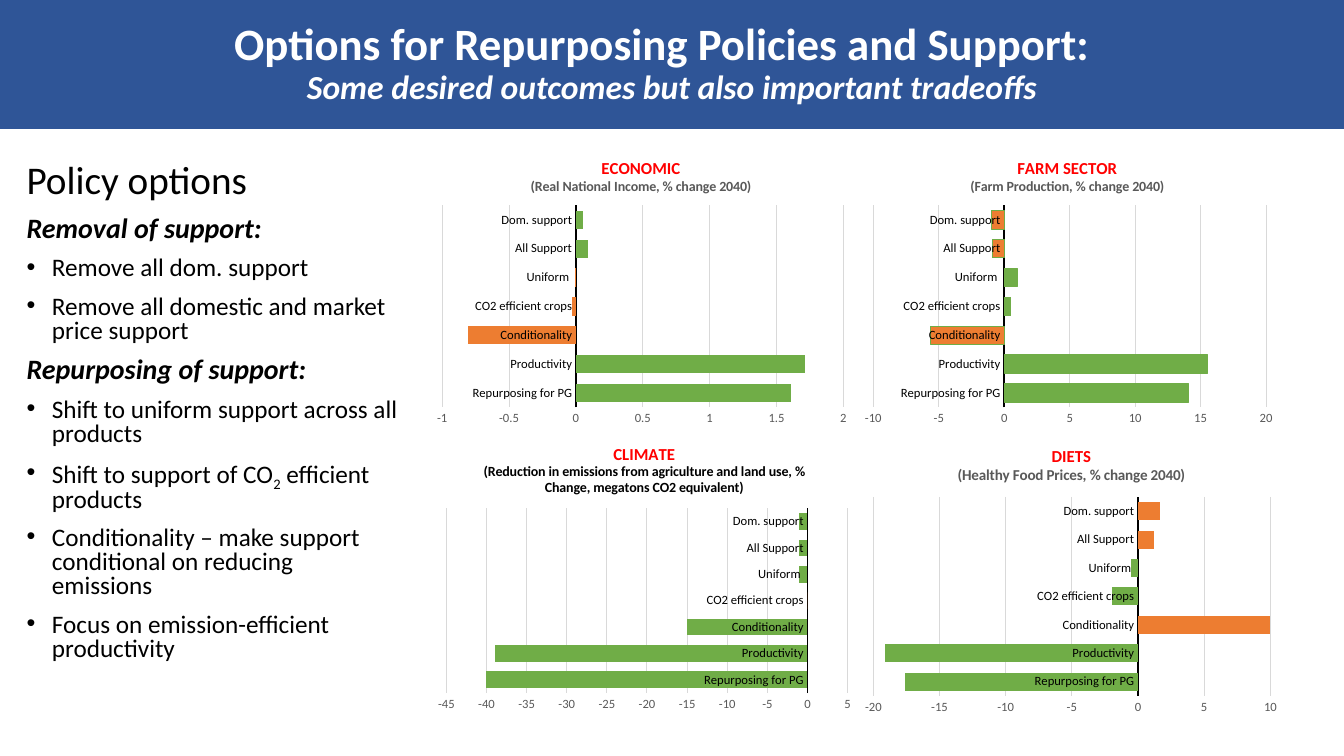
from dataclasses import dataclass

from lxml import etree
from pptx import Presentation
from pptx.chart.data import CategoryChartData
from pptx.dml.color import RGBColor
from pptx.enum.chart import XL_CHART_TYPE as ChartType, XL_TICK_MARK as Tick
from pptx.enum.shapes import MSO_SHAPE as Shape
from pptx.enum.text import MSO_ANCHOR as Anchor, PP_ALIGN as Align
from pptx.oxml import parse_xml
from pptx.oxml.ns import nsdecls, qn
from pptx.util import Cm, Pt

# Content
TITLE = "Options for Repurposing Policies and Support:"
SUBTITLE = "Some desired outcomes but also important tradeoffs"
HEADING = "Policy options"
OPTIONS = [
    ("Removal of support:", [
        ["Remove all dom. support"],
        ["Remove all domestic and market price support"]]),
    ("Repurposing of support:", [
        ["Shift to uniform support across all products"],
        ["Shift to support of CO", "2", " efficient products"],
        ["Conditionality – make support conditional on reducing emissions"],
        ["Focus on emission-efficient productivity"]]),
]
SCENARIOS = ["Repurposing for PG", "Productivity", "Conditionality",
             "CO2 efficient crops", "Uniform ", "All Support", "Dom. support"]
# plot and title hold fractions of the chart frame; adverse lists orange bars
CHARTS = [
    dict(row=0, col=0, name="ECONOMIC", note="(Real National Income, % change 2040)",
         values=[1.61, 1.71, -0.81, -0.03, -0.01, 0.09, 0.05], adverse=[2, 3, 4],
         scale=(-1, 2, 0.5), plot=(0.03, 0.22, 0.94, 0.7), title=(0.23, 0.04)),
    dict(row=0, col=1, name="FARM SECTOR", note="(Farm Production, % change 2040)",
         values=[14.1, 15.5, -5.6, 0.5, 1, -0.9, -1], adverse=[2, 5, 6],
         scale=(-10, 20, 5), plot=(0.04, 0.22, 0.92, 0.7), title=(0.26, 0.04),
         outlined=True),
    dict(row=1, col=0, name="CLIMATE",
         note="(Reduction in emissions from agriculture and land use, % Change, "
              "megatons CO2 equivalent)",
         values=[-40, -39, -15, 0, -1, -1, -1], adverse=[3],
         scale=(-45, 5, 5), plot=(0.04, 0.27, 0.94, 0.64), title=(0.12, 0.03)),
    dict(row=1, col=1, name="DIETS", note="(Healthy Food Prices, % change 2040)",
         values=[-17.6, -19.1, 10, -2, -0.5, 1.2, 1.7], adverse=[2, 5, 6],
         scale=(-20, 10, 5), plot=(0.04, 0.23, 0.93, 0.69), title=(0.23, 0.04),
         note_size=10.8),
]


@dataclass(frozen=True)
class Theme:
    font: str = "Calibri"
    banner: RGBColor = RGBColor(0x2F, 0x55, 0x97)
    white: RGBColor = RGBColor(0xFF, 0xFF, 0xFF)
    black: RGBColor = RGBColor(0, 0, 0)
    red: RGBColor = RGBColor(0xFF, 0, 0)
    gray: RGBColor = RGBColor(0x59, 0x59, 0x59)
    grid: RGBColor = RGBColor(0xD9, 0xD9, 0xD9)
    green: RGBColor = RGBColor(0x70, 0xAD, 0x47)
    orange: RGBColor = RGBColor(0xED, 0x7D, 0x31)
    title: int = 32
    subtitle: int = 24
    heading: int = 28
    group: int = 20
    bullet: int = 18
    chart_name: int = 12
    chart_note: int = 10
    axis: int = 9


T = Theme()
INDENT = Cm(0.64)
CHART_W, CHART_H = Cm(10.76), Cm(7.27)
CHART_LEFT, CHART_TOP = Cm(10.82), Cm(3.58)


def style(font, size, color, bold=False, italic=False):
    font.name, font.size = T.font, Pt(size)
    font.bold, font.italic = bold, italic
    font.color.rgb = color


def add_run(p, text, *look):
    r = p.add_run()
    r.text = text
    style(r.font, *look)
    return r


def next_paragraph(tf):
    first = tf.paragraphs[0]
    return tf.add_paragraph() if first.runs else first


def option_paragraph(tf):
    p = next_paragraph(tf)
    p.line_spacing, p.space_before = 0.8, Pt(10)
    return p


def add_bullet(p):
    pPr = p._p.get_or_add_pPr()
    pPr.set("marL", str(INDENT))
    pPr.set("indent", str(-INDENT))
    etree.SubElement(pPr, qn("a:buFont"), typeface="Arial")
    etree.SubElement(pPr, qn("a:buChar"), char="•")


def set_layout(element, target, **fractions):
    """Place a chart part by fractions of the chart frame."""
    for old in element.findall(qn("c:layout")):
        element.remove(old)
    inner = f'<c:layoutTarget val="{target}"/>' if target else ""
    modes = "".join(f'<c:{k}Mode val="edge"/>' for k in "xy")
    places = "".join(f'<c:{k} val="{v}"/>' for k, v in fractions.items())
    layout = parse_xml(f'<c:layout {nsdecls("c")}><c:manualLayout>{inner}{modes}'
                       f'{places}</c:manualLayout></c:layout>')
    text = element.find(qn("c:tx"))
    element.insert(0 if text is None else 1, layout)


def add_outcome_chart(s, row, col, name, note, values, adverse, scale, plot, title,
                      note_size=T.chart_note, outlined=False):
    data = CategoryChartData()
    data.categories = SCENARIOS
    data.add_series("Series 1", values)
    chart = s.shapes.add_chart(
        ChartType.BAR_CLUSTERED, CHART_LEFT + col * CHART_W,
        CHART_TOP + row * CHART_H, CHART_W, CHART_H, data).chart
    style(chart.font, 10, T.black)
    chart.has_legend = False

    # Chart title
    tf = chart.chart_title.text_frame
    add_run(next_paragraph(tf), name, T.chart_name, T.red, True)
    add_run(next_paragraph(tf), note, note_size,
            T.black if name == "CLIMATE" else T.gray, True)
    chart.chart_title.include_in_layout = False
    set_layout(chart.chart_title._element, None, **dict(zip("xy", title)))
    set_layout(chart._chartSpace.chart.plotArea, "inner", **dict(zip("xywh", plot)))

    # Bars
    bars = chart.plots[0]
    bars.gap_width, bars.vary_by_categories = 58, False
    series = bars.series[0]
    series.invert_if_negative = False
    series.format.fill.solid()
    series.format.fill.fore_color.rgb = T.green
    if outlined:
        series.format.line.color.rgb, series.format.line.width = T.green, Pt(0.75)
    for i in adverse:
        look = series.points[i].format
        look.fill.solid()
        look.fill.fore_color.rgb = T.orange
        if outlined:
            look.line.color.rgb, look.line.width = T.green, Pt(0.75)

    # Axes
    cat, val = chart.category_axis, chart.value_axis
    for axis, color in ((cat, T.black), (val, T.gray)):
        axis.major_tick_mark = axis.minor_tick_mark = Tick.NONE
        style(axis.tick_labels.font, T.axis, color)
    cat.format.line.color.rgb, cat.format.line.width = T.black, Pt(1.25)
    val.format.line.fill.background()
    val.minimum_scale, val.maximum_scale, val.major_unit = scale
    grid = val.major_gridlines.format.line
    grid.color.rgb, grid.width = T.grid, Pt(0.75)


prs = Presentation()
prs.slide_width, prs.slide_height = Cm(33.87), Cm(19.05)
s = prs.slides.add_slide(prs.slide_layouts[6])

# Policy options
tf = s.shapes.add_textbox(Cm(0.42), Cm(4.03), Cm(9.86), Cm(13.28)).text_frame
tf.word_wrap = True
add_run(option_paragraph(tf), HEADING, T.heading, T.black)
for group, bullets in OPTIONS:
    add_run(option_paragraph(tf), group, T.group, T.black, True, True)
    for parts in bullets:
        p = option_paragraph(tf)
        add_bullet(p)
        for part in parts:
            r = add_run(p, part, T.bullet, T.black)
            if part == "2":
                r.font._element.set("baseline", "-25000")

# Outcome charts
for outcome in CHARTS:
    add_outcome_chart(s, **outcome)

# Title banner
sp = s.shapes.add_shape(Shape.RECTANGLE, 0, 0, prs.slide_width, Cm(3.25))
sp.shadow.inherit = False
sp.fill.solid()
sp.fill.fore_color.rgb = T.banner
sp.line.fill.background()
tf = sp.text_frame
tf.word_wrap, tf.vertical_anchor = True, Anchor.MIDDLE
for text, size, italic, right in ((TITLE, T.title, False, Cm(0.5)),
                                  (SUBTITLE, T.subtitle, True, 0)):
    p = next_paragraph(tf)
    p.alignment, p.line_spacing = Align.CENTER, 0.9
    p._p.get_or_add_pPr().set("marR", str(right))
    add_run(p, text, size, T.white, True, italic)

prs.save("out.pptx")
